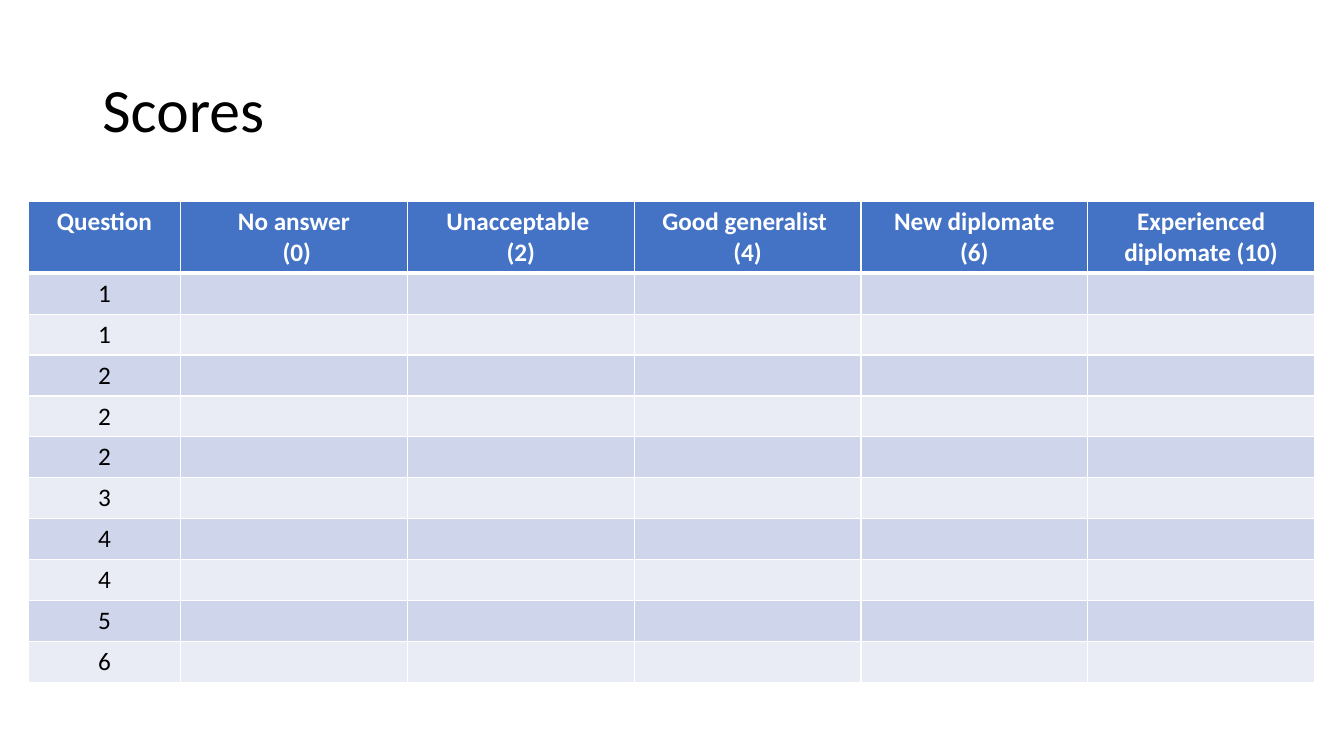
from dataclasses import dataclass

from lxml import etree
from pptx import Presentation
from pptx.dml.color import RGBColor
from pptx.enum.text import MSO_ANCHOR, PP_ALIGN
from pptx.oxml.ns import qn
from pptx.util import Emu, Pt

LEFT, CENTER = PP_ALIGN.LEFT, PP_ALIGN.CENTER
MIDDLE = MSO_ANCHOR.MIDDLE
SCALE = 9525  # EMU in one px


@dataclass(frozen=True)
class Theme:
    font: str = "Calibri"
    title: int = 44
    cell: int = 18
    ink: str = "000000"
    paper: str = "FFFFFF"
    head: str = "4472C4"
    bands: tuple = ("CFD5EA", "E9EBF5")
    thin: int = 1
    thick: int = 3


THEME = Theme()
HEADS = ["Question", "No answer\n (0)", "Unacceptable \n(2)",
         "Good generalist \n(4)", "New diplomate\n(6)",
         "Experienced diplomate (10)"]
MARKS = [1, 1, 2, 2, 2, 3, 4, 4, 5, 6]
WIDTHS = [145] + [216] * 5
HEIGHTS = [67] + [39] * len(MARKS)


def px(n):
    return Emu(n * SCALE)


def style(frame, size, color, align, bold=False):
    for para in frame.paragraphs:
        para.alignment = align
        font = para.font
        font.name, font.size, font.bold = THEME.font, Pt(size), bold
        font.color.rgb = RGBColor.from_string(color)


def add_title(slide, text, left, top, width, height):
    shape = slide.shapes.title
    shape.left, shape.top = px(left), px(top)
    shape.width, shape.height = px(width), px(height)
    frame = shape.text_frame
    frame.text = text
    frame.vertical_anchor = MIDDLE
    style(frame, THEME.title, THEME.ink, LEFT)
    frame.paragraphs[0].line_spacing = 0.9


def add_edges(cell, top, bottom):
    # Borders come before the fill in the cell properties
    props = cell._tc.get_or_add_tcPr()
    edges = {"lnL": THEME.thin, "lnR": THEME.thin, "lnT": top, "lnB": bottom}
    for spot, (side, width) in enumerate(edges.items()):
        line = etree.Element(qn(f"a:{side}"), w=str(Pt(width)))
        fill = etree.SubElement(line, qn("a:solidFill"))
        etree.SubElement(fill, qn("a:srgbClr"), val=THEME.paper)
        props.insert(spot, line)


def fill_cell(cell, text, row):
    head = row == 0
    cell.text = text
    cell.fill.solid()
    back = THEME.head if head else THEME.bands[(row - 1) % 2]
    cell.fill.fore_color.rgb = RGBColor.from_string(back)
    ink = THEME.paper if head else THEME.ink
    style(cell.text_frame, THEME.cell, ink, CENTER, head)
    add_edges(cell, THEME.thick if row == 1 else THEME.thin,
              THEME.thick if head else THEME.thin)


def add_grid(slide, rows, left, top):
    frame = slide.shapes.add_table(
        len(rows), len(WIDTHS), px(left), px(top),
        px(sum(WIDTHS)), px(sum(HEIGHTS)))
    table = frame.table
    for col, width in zip(table.columns, WIDTHS):
        col.width = px(width)
    for row, height in zip(table.rows, HEIGHTS):
        row.height = px(height)
    for r, texts in enumerate(rows):
        for c, text in enumerate(texts):
            fill_cell(table.cell(r, c), text, r)


def main():
    deck = Presentation()
    deck.slide_width, deck.slide_height = px(1280), px(720)
    slide = deck.slides.add_slide(deck.slide_layouts[5])

    # Heading
    add_title(slide, "Scores", 88, 38, 1104, 139)

    # Score sheet: one row for each mark, left open to fill in
    blank = [""] * (len(HEADS) - 1)
    rows = [HEADS] + [[str(mark)] + blank for mark in MARKS]
    add_grid(slide, rows, 27, 192)

    deck.save("out.pptx")


if __name__ == "__main__":
    main()
